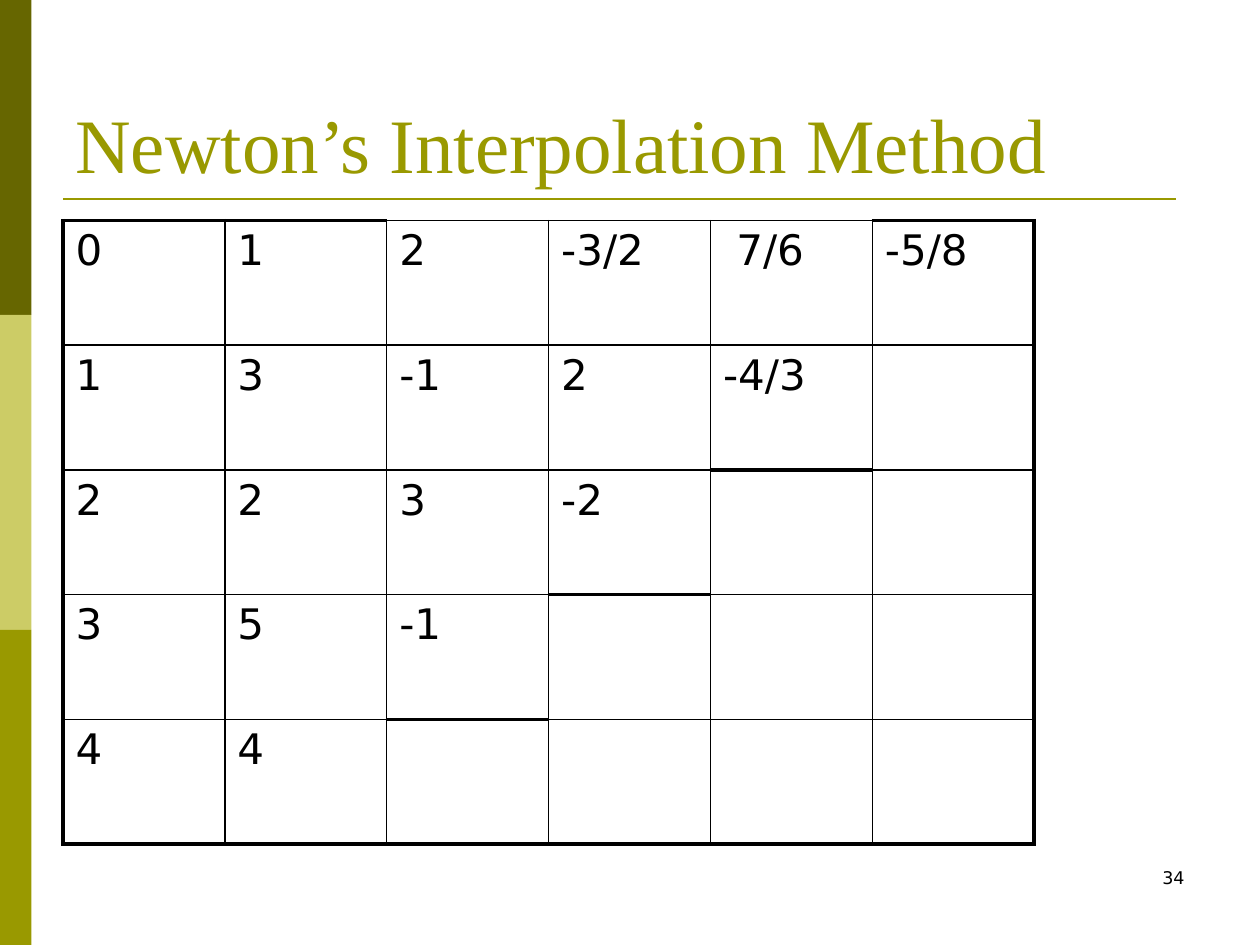
"""Build a slide with the divided-difference table of Newton's interpolation method."""
from dataclasses import dataclass

import lxml.etree
import pptx
import pptx.dml.color
import pptx.enum.shapes
import pptx.enum.text
import pptx.oxml.ns
import pptx.util

Inches = pptx.util.Inches
Pt = pptx.util.Pt
qn = pptx.oxml.ns.qn
Align = pptx.enum.text.PP_ALIGN
Anchor = pptx.enum.text.MSO_ANCHOR


@dataclass(frozen=True)
class Theme:
    black: str = "000000"
    olive: str = "999900"
    bands: tuple[str, ...] = ("666600", "CCCC66", "999900")
    heading: str = "Times New Roman"
    body: str = "DejaVu Sans"
    title_size: int = 44
    cell_size: int = 24
    number_size: int = 10
    thin: float = 1
    rule: float = 1.5
    thick: float = 2.25


@dataclass(frozen=True)
class Box:
    left: float
    top: float
    width: float
    height: float

    def emu(self) -> list[int]:
        return [Inches(v) for v in (self.left, self.top, self.width, self.height)]


@dataclass(frozen=True)
class Label:
    text: str
    box: Box
    font: str
    size: int
    color: str
    align: Align
    anchor: Anchor


THEME = Theme()
WIDTH, HEIGHT = 10, 7.5
GRID = Box(0.5, 1.75, 7.71, 4.95)
DIFFERENCES = (
    ("0", "1", "2", "-3/2", " 7/6", "-5/8"),
    ("1", "3", "-1", "2", "-4/3"),
    ("2", "2", "3", "-2"),
    ("3", "5", "-1"),
    ("4", "4"),
)
ROWS, COLS = len(DIFFERENCES), len(DIFFERENCES[0])
LABELS = (
    Label("34", Box(7.17, 6.83, 2.33, 0.5), THEME.body, THEME.number_size,
          THEME.black, Align.RIGHT, Anchor.TOP),
    Label("Newton’s Interpolation Method", Box(0.5, 0.3, 9, 1.25), THEME.heading,
          THEME.title_size, THEME.olive, Align.LEFT, Anchor.BOTTOM),
)


def rgb(color: str) -> pptx.dml.color.RGBColor:
    return pptx.dml.color.RGBColor.from_string(color)


def style(p, font: str, size: int, color: str) -> None:
    p.font.name, p.font.size = font, Pt(size)
    p.font.color.rgb = rgb(color)


def draw_band(s, index: int, color: str) -> None:
    height = HEIGHT / len(THEME.bands)
    box = Box(0, index * height, WIDTH / 40, height)
    sp = s.shapes.add_shape(pptx.enum.shapes.MSO_SHAPE.RECTANGLE, *box.emu())
    sp.shadow.inherit = False
    sp.fill.solid()
    sp.fill.fore_color.rgb = rgb(color)
    sp.line.fill.background()


def draw_rule(s) -> None:
    ends = [Inches(v) for v in (0.5, 1.58, 9.33, 1.58)]
    line = s.shapes.add_connector(pptx.enum.shapes.MSO_CONNECTOR.STRAIGHT, *ends)
    line.line.color.rgb = rgb(THEME.olive)
    line.line.width = Pt(THEME.rule)
    lxml.etree.SubElement(line._element.spPr, qn("a:effectLst"))


def draw_label(s, label: Label) -> None:
    tf = s.shapes.add_textbox(*label.box.emu()).text_frame
    tf.word_wrap = True
    tf.vertical_anchor = label.anchor
    p = tf.paragraphs[0]
    p.text, p.alignment = label.text, label.align
    style(p, label.font, label.size, label.color)


def thick_sides(row: int, col: int) -> set[str]:
    """Return the sides of a cell that lie on the frame or the staircase."""
    stair = 2 <= col < COLS - 1
    sides = {
        "L": col == 0,
        "R": col == COLS - 1,
        "T": (row == 0 and not stair) or (stair and row + col == COLS),
        "B": row == ROWS - 1 or (stair and row + col == ROWS),
    }
    return {side for side, thick in sides.items() if thick}


def draw_borders(cell, thick: set[str]) -> None:
    tc_pr = cell._tc.get_or_add_tcPr()
    for side in "LRTB":
        width = THEME.thick if side in thick else THEME.thin
        ln = lxml.etree.SubElement(tc_pr, qn(f"a:ln{side}"), w=str(Pt(width)))
        fill = lxml.etree.SubElement(ln, qn("a:solidFill"))
        lxml.etree.SubElement(fill, qn("a:srgbClr"), val=THEME.black)


def fill_cell(cell, text: str) -> None:
    p = cell.text_frame.paragraphs[0]
    p.text = text
    before = lxml.etree.SubElement(p._p.get_or_add_pPr(), qn("a:spcBef"))
    lxml.etree.SubElement(before, qn("a:spcPct"), val="20000")
    style(p, THEME.body, THEME.cell_size, THEME.black)


def draw_table(s) -> None:
    table = s.shapes.add_table(ROWS, COLS, *GRID.emu()).table
    table.first_row = table.horz_banding = False
    for column in table.columns:
        column.width = Inches(GRID.width / COLS)
    for r, values in enumerate(DIFFERENCES):
        table.rows[r].height = Inches(GRID.height / ROWS)
        for c in range(COLS):
            cell = table.cell(r, c)
            draw_borders(cell, thick_sides(r, c))
            cell.fill.background()
            if c < len(values):
                fill_cell(cell, values[c])


def main() -> None:
    prs = pptx.Presentation()
    prs.slide_width, prs.slide_height = Inches(WIDTH), Inches(HEIGHT)
    s = prs.slides.add_slide(prs.slide_layouts[6])
    for index, color in enumerate(THEME.bands):
        draw_band(s, index, color)
    draw_rule(s)
    for label in LABELS:
        draw_label(s, label)
    draw_table(s)
    prs.save("out.pptx")


if __name__ == "__main__":
    main()
